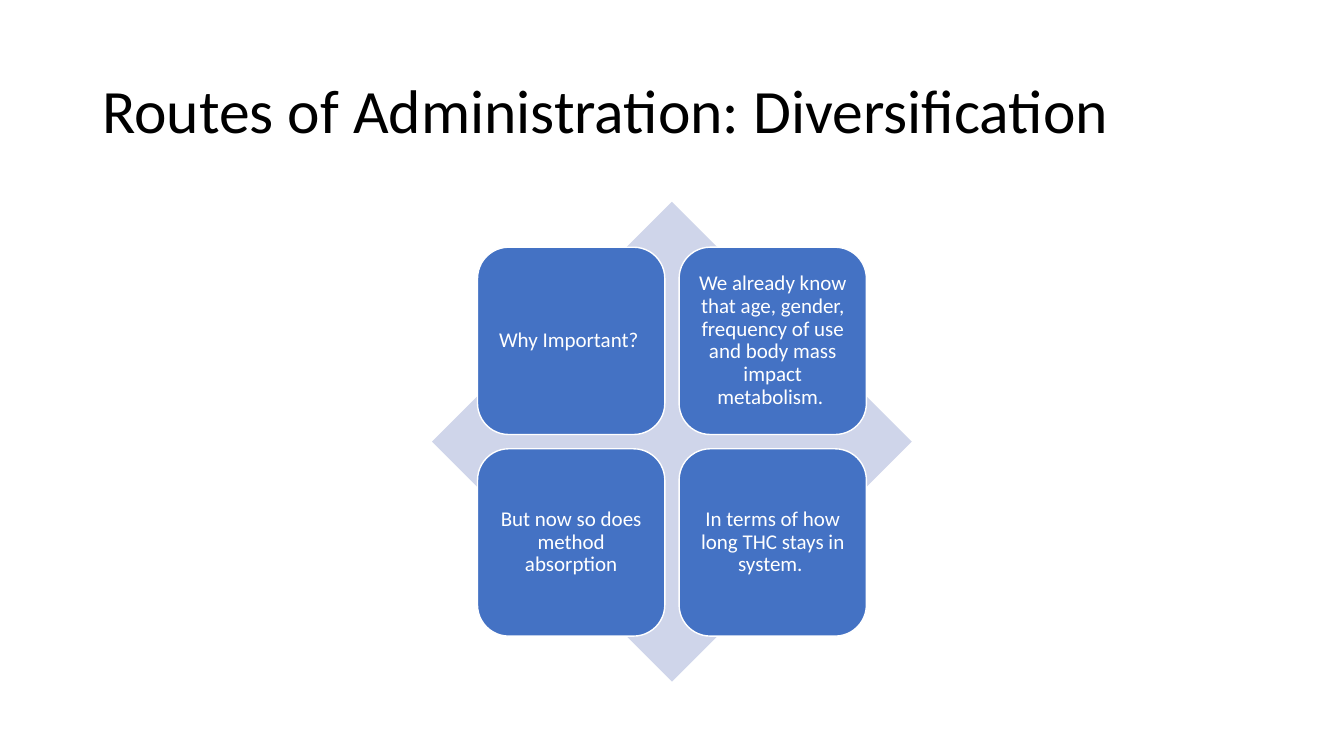
import pptx
import pptx.util
import pptx.dml.color
import pptx.enum.shapes
import pptx.enum.text

Cm = pptx.util.Cm
SHAPE = pptx.enum.shapes.MSO_SHAPE
ALIGN = pptx.enum.text.PP_ALIGN

# Content
TITLE = "Routes of Administration: Diversification"
TILES = [
    ["Why Important? ",
     "We already know that age, gender, frequency of use and body mass "
     "impact metabolism. "],
    ["But now so does method absorption",
     "In terms of how long THC stays in system. "],
]

THEME = {
    "font": "Calibri", "title_size": 44, "tile_size": 15,
    "title": "000000", "tile_text": "FFFFFF",
    "tile": "4472C4", "tile_line": "FFFFFF", "diamond": "CFD5EA",
}

# Layout in centimetres
SLIDE_W, SLIDE_H = 33.87, 19.05
TITLE_BOX = (2.33, 1.01, 29.21, 3.68)
CENTRE_X, CENTRE_Y = SLIDE_W / 2, 11.13
DIAMOND, TILE, GAP = 12.09, 4.72, 0.36


def rgb(name):
    return pptx.dml.color.RGBColor.from_string(THEME[name])


def write(sp, text, *, size, color, align, inset):
    tf = sp.text_frame
    tf.word_wrap = True
    tf.auto_size = pptx.enum.text.MSO_AUTO_SIZE.NONE
    tf.vertical_anchor = pptx.enum.text.MSO_ANCHOR.MIDDLE
    tf.margin_left = tf.margin_right = Cm(inset[0])
    tf.margin_top = tf.margin_bottom = Cm(inset[1])
    p = tf.paragraphs[0]
    p.alignment = align
    p.line_spacing = 0.9
    r = p.add_run()
    r.text = text
    r.font.name = THEME["font"]
    r.font.size = pptx.util.Pt(THEME[size])
    r.font.color.rgb = rgb(color)


def add_square(s, kind, x, y, side, fill, line=None):
    sp = s.shapes.add_shape(kind, Cm(x), Cm(y), Cm(side), Cm(side))
    sp.shadow.inherit = False
    sp.fill.solid()
    sp.fill.fore_color.rgb = rgb(fill)
    if line:
        sp.line.color.rgb = rgb(line)
        sp.line.width = pptx.util.Pt(1)
    else:
        sp.line.fill.background()
    return sp


def main():
    prs = pptx.Presentation()
    prs.slide_width, prs.slide_height = Cm(SLIDE_W), Cm(SLIDE_H)
    s = prs.slides.add_slide(prs.slide_layouts.get_by_name("Title Only"))

    # Title
    title = s.shapes.title
    title.left, title.top, title.width, title.height = map(Cm, TITLE_BOX)
    write(title, TITLE, size="title_size", color="title",
          align=ALIGN.LEFT, inset=(0.25, 0.13))

    # Diamond behind the tiles
    add_square(s, SHAPE.DIAMOND, CENTRE_X - DIAMOND / 2,
               CENTRE_Y - DIAMOND / 2, DIAMOND, "diamond")

    # Two by two tiles around the centre
    offset = TILE + GAP / 2
    for row, texts in enumerate(TILES):
        for col, text in enumerate(texts):
            sp = add_square(s, SHAPE.ROUNDED_RECTANGLE,
                            CENTRE_X - offset + col * (TILE + GAP),
                            CENTRE_Y - offset + row * (TILE + GAP),
                            TILE, "tile", "tile_line")
            write(sp, text, size="tile_size", color="tile_text",
                  align=ALIGN.CENTER, inset=(0.15, 0.15))

    prs.save("out.pptx")


if __name__ == "__main__":
    main()
